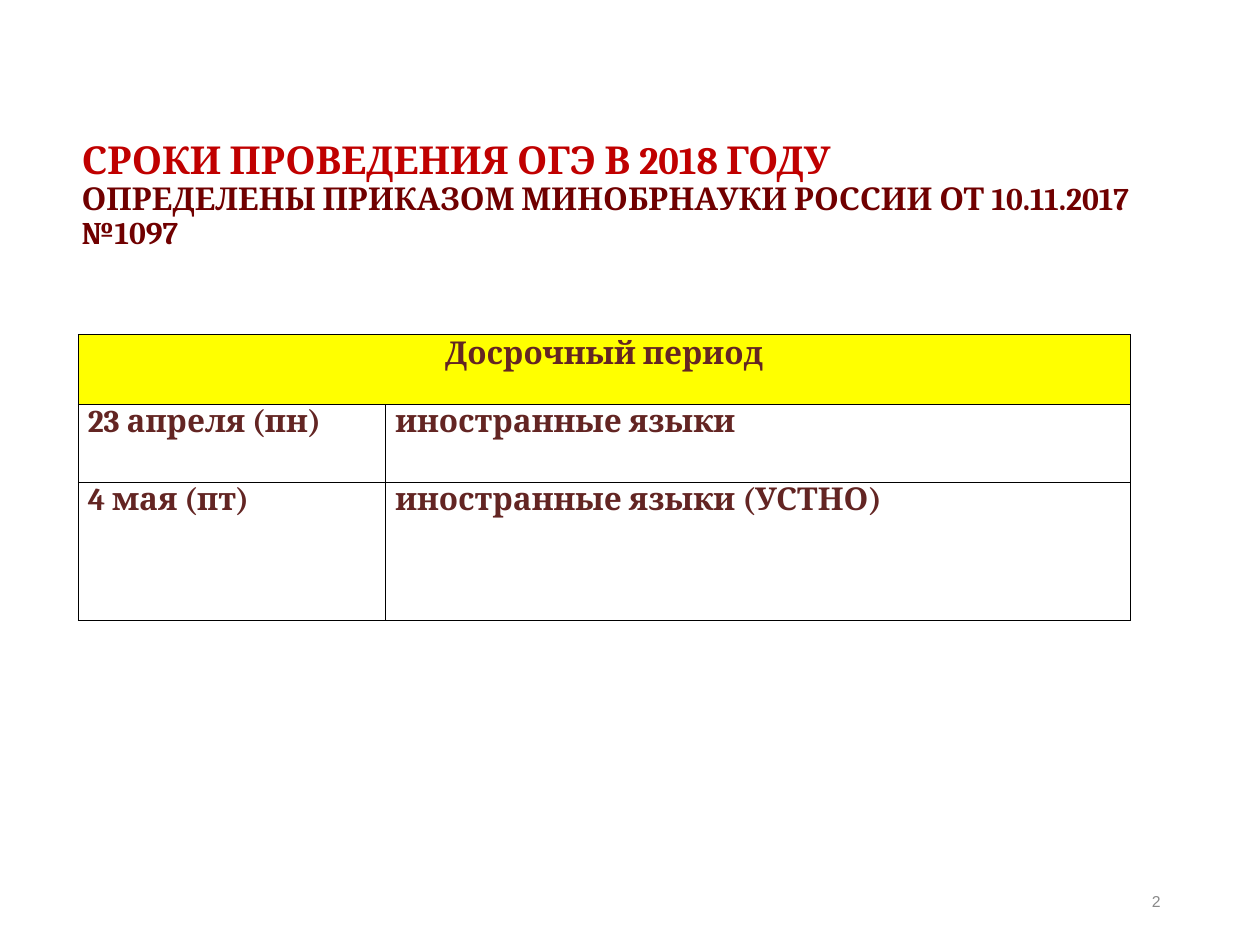
from lxml.etree import SubElement
from pptx import Presentation
from pptx.dml.color import RGBColor
from pptx.enum.text import MSO_ANCHOR as Anchor, PP_ALIGN as Align
from pptx.oxml.ns import qn
from pptx.util import Pt

COLUMN_WIDTHS = (175.7, 425.5)
ROW_HEIGHTS = (40, 44.6, 78.5)
EXAMS = (
    ("23 апреля (пн)", "иностранные языки"),
    ("4 мая (пт)", "иностранные языки (УСТНО)"),
)


def color(hex_value):
    return RGBColor.from_string(hex_value)


def style_font(font, size, hex_value, name="Cambria", bold=True):
    font.name = name
    font.size = Pt(size)
    font.bold = bold
    font.color.rgb = color(hex_value)


def add_text(slide, left, top, width, height, text):
    box = slide.shapes.add_textbox(Pt(left), Pt(top), Pt(width), Pt(height))
    frame = box.text_frame
    frame.word_wrap = True
    frame.vertical_anchor = Anchor.MIDDLE
    frame.text = text
    return frame


def add_borders(cell):
    properties = cell._tc.get_or_add_tcPr()
    for side in ("a:lnL", "a:lnR", "a:lnT", "a:lnB"):
        line = SubElement(properties, qn(side), w=str(Pt(0.5)))
        fill = SubElement(line, qn("a:solidFill"))
        SubElement(fill, qn("a:srgbClr"), val="000000")


def fill_cell(cell, text, fill, align=Align.LEFT, side_margin=5.4, top_margin=0):
    cell.fill.solid()
    cell.fill.fore_color.rgb = color(fill)
    cell.margin_left = cell.margin_right = Pt(side_margin)
    cell.margin_top, cell.margin_bottom = Pt(top_margin), Pt(0)
    cell.text = text
    paragraph = cell.text_frame.paragraphs[0]
    paragraph.alignment = align
    style_font(paragraph.runs[0].font, 18, "632523")


def add_schedule(slide):
    frame = slide.shapes.add_table(
        len(ROW_HEIGHTS), len(COLUMN_WIDTHS), Pt(44.8), Pt(191.2),
        Pt(sum(COLUMN_WIDTHS)), Pt(sum(ROW_HEIGHTS)))
    schedule = frame.table
    schedule.first_row = schedule.horz_banding = False
    for column, width in zip(schedule.columns, COLUMN_WIDTHS):
        column.width = Pt(width)
    for row, height in zip(schedule.rows, ROW_HEIGHTS):
        row.height = Pt(height)
    for cell in schedule.iter_cells():
        add_borders(cell)

    # Period heading across both columns
    period = schedule.cell(0, 0)
    period.merge(schedule.cell(0, 1))
    fill_cell(period, "Досрочный период", "FFFF00", Align.CENTER, 0.7, 0.7)

    # Dates and subjects
    for row, exam in enumerate(EXAMS, start=1):
        for column, text in enumerate(exam):
            fill_cell(schedule.cell(row, column), text, "FFFFFF")


def add_title(slide):
    frame = add_text(
        slide, 39.6, 85.7, 648, 77,
        "СРОКИ ПРОВЕДЕНИЯ ОГЭ В 2018 ГОДУ\v"
        "ОПРЕДЕЛЕНЫ ПРИКАЗОМ МИНОБРНАУКИ РОССИИ ОТ 10.11.2017 №1097")
    frame.margin_top, frame.margin_bottom = Pt(0), Pt(24)
    paragraph = frame.paragraphs[0]
    paragraph.line_spacing = 0.9
    heading, decree = paragraph.runs
    style_font(heading.font, 22, "C00000")
    style_font(decree.font, 18, "700000")


def add_page_number(slide):
    paragraph = add_text(slide, 508.3, 500.4, 162, 28.8, "2").paragraphs[0]
    paragraph.alignment = Align.RIGHT
    style_font(paragraph.runs[0].font, 9, "898989", "Arial", False)


def main():
    presentation = Presentation()
    presentation.slide_width, presentation.slide_height = Pt(720), Pt(540)
    slide = presentation.slides.add_slide(presentation.slide_layouts[6])
    add_schedule(slide)
    add_page_number(slide)
    add_title(slide)
    presentation.save("out.pptx")


if __name__ == "__main__":
    main()
